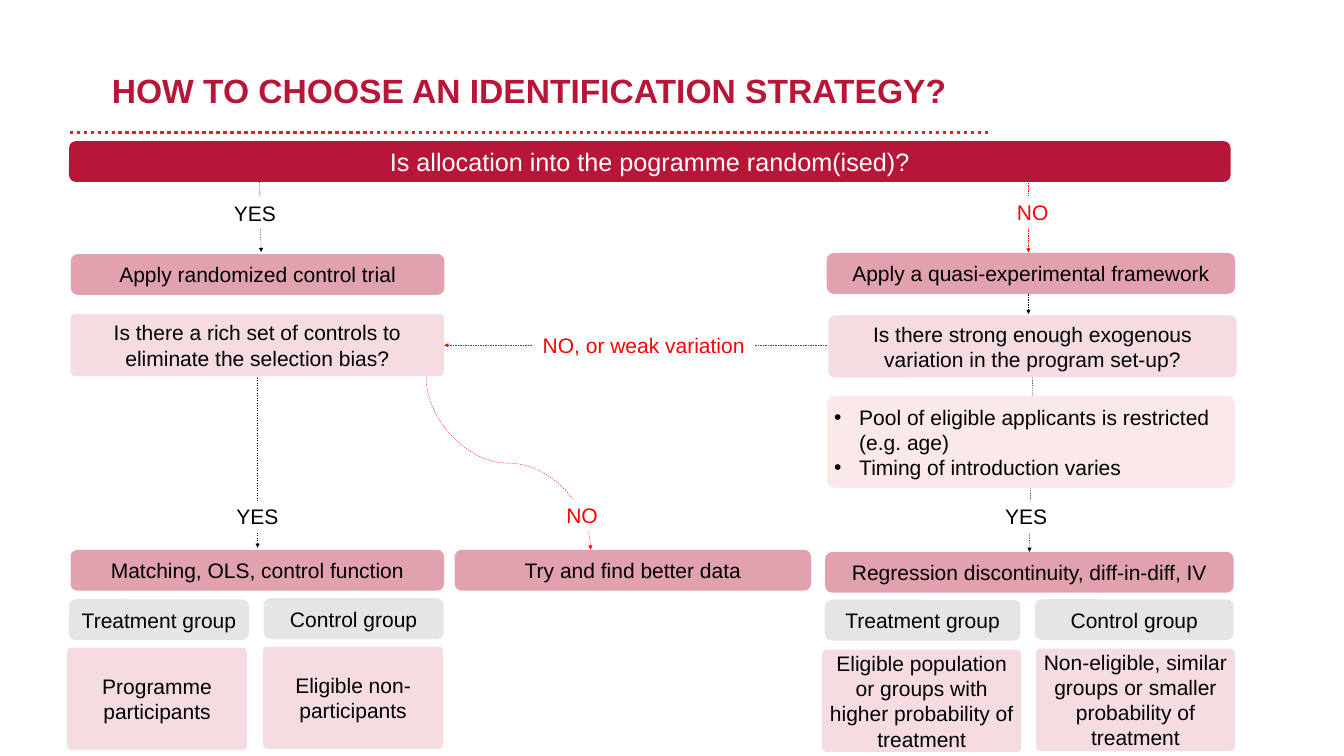
from dataclasses import dataclass

from lxml import etree
from pptx import Presentation
from pptx.dml.color import RGBColor
from pptx.enum.dml import MSO_LINE
from pptx.enum.shapes import MSO_CONNECTOR, MSO_SHAPE
from pptx.enum.text import MSO_ANCHOR, PP_ALIGN
from pptx.oxml.ns import qn
from pptx.util import Pt

ROUND = MSO_SHAPE.ROUNDED_RECTANGLE
STRAIGHT, CURVE = MSO_CONNECTOR.STRAIGHT, MSO_CONNECTOR.CURVE
DASH, DOTS = MSO_LINE.DASH, MSO_LINE.ROUND_DOT
CENTER, LEFT = PP_ALIGN.CENTER, PP_ALIGN.LEFT
MIDDLE = MSO_ANCHOR.MIDDLE


@dataclass(frozen=True)
class Theme:
    font: str = "Arial"
    brand: str = "B81639"
    rule: str = "D8222C"
    grey: str = "C0C0C0"
    blush: str = "FBE9EA"
    white: str = "FFFFFF"
    black: str = "000000"
    red: str = "FF0000"
    title: int = 48
    lead: int = 36
    body: int = 30


theme = Theme()


def box(place, text, fill, alpha=100, ink=theme.black, size=theme.body,
        adj=0.167, align=CENTER):
    """Add a rounded box; alpha is the opacity of its fill in percent."""
    shape = slide.shapes.add_shape(ROUND, *map(Pt, place))
    shape.adjustments[0] = adj
    shape.shadow.inherit = False
    shape.line.fill.background()
    shape.fill.solid()
    shape.fill.fore_color.rgb = RGBColor.from_string(fill)
    if alpha < 100:
        color = next(shape.element.spPr.iter(qn("a:srgbClr")))
        etree.SubElement(color, qn("a:alpha")).set("val", str(alpha * 1000))
    frame = shape.text_frame
    frame.word_wrap = True
    frame.vertical_anchor = MIDDLE
    frame.text = text
    for para in frame.paragraphs:
        para.alignment = align
        for run in para.runs:
            run.font.name = theme.font
            run.font.size = Pt(size)
            run.font.color.rgb = RGBColor.from_string(ink)
    return shape


def link(ends, color, width=0.5, dash=DASH, kind=STRAIGHT, arrow=True):
    line = slide.shapes.add_connector(kind, *map(Pt, ends))
    line.line.color.rgb = RGBColor.from_string(color)
    line.line.width = Pt(width)
    line.line.dash_style = dash
    props = line.element.spPr
    if arrow:
        tip = etree.SubElement(props.find(qn("a:ln")), qn("a:tailEnd"))
        tip.set("type", "triangle")
    etree.SubElement(props, qn("a:effectLst"))
    return line


deck = Presentation()
deck.slide_width, deck.slide_height = Pt(1919.5), Pt(1080)
slide = deck.slides.add_slide(deck.slide_layouts[5])

# Title and rule
title = slide.shapes.title
title.left, title.top, title.width, title.height = map(
    Pt, (99.4, 100, 1313.3, 58.3))
frame = title.text_frame
frame.margin_left = frame.margin_right = 0
frame.margin_top = frame.margin_bottom = 0
frame.vertical_anchor = MIDDLE
frame.word_wrap = True
frame.text = "HOW TO CHOOSE AN IDENTIFICATION STRATEGY?"
para = frame.paragraphs[0]
para.alignment = CENTER
font = para.runs[0].font
font.name, font.size, font.bold = theme.font, Pt(theme.title), True
font.color.rgb = RGBColor.from_string(theme.brand)
link((99.4, 189.4, 1412.6, 189.4), theme.rule, 5, DOTS, arrow=False)

# Arrows, behind the boxes and labels
for ends, color in (
    ((370.8, 259.2, 373, 360), theme.black),
    ((1468.8, 261.4, 1468.8, 360.7), theme.red),
    ((1468.8, 420.5, 1468.8, 448.6), theme.black),
    ((1474.6, 539.3, 1470.2, 788.4), theme.black),
    ((1180.8, 493.2, 634.3, 493.2), theme.red),
    ((367.9, 539.3, 367.9, 782.6), theme.black),
):
    link(ends, color)

# A quarter turn and a flip make the curve leave and arrive vertically
curve = link((602.6, 544.3, 849.6, 779), theme.red, kind=CURVE)
turn = curve.element.spPr.find(qn("a:xfrm"))
turn.set("rot", str(270 * 60000))
turn.set("flipH", "1")

# Opening question
BAR = 58.3
box((98.6, 201.6, 1658.9, BAR),
    "Is allocation into the pogramme random(ised)?",
    theme.brand, ink=theme.white, size=theme.lead)

# Methods
for text, left, top, width in (
    ("Apply randomized control trial", 101.2, 362.9, 533.5),
    ("Apply a quasi-experimental framework", 1180.8, 361.4, 583.2),
    ("Matching, OLS, control function", 100.8, 785.5, 533.5),
    ("Try and find better data", 649.4, 785.5, 509),
    ("Regression discontinuity, diff-in-diff, IV", 1178.6, 788.4, 583.2),
):
    box((left, top, width, BAR), text, theme.brand, 40)

# Follow-up questions
for text, left, top, width, adj in (
    ("Is there a rich set of controls to eliminate the selection bias?",
     100.8, 448.6, 533.5, 0.073),
    ("Is there strong enough exogenous variation in the program set-up?",
     1183, 450.7, 583.2, 0.104),
):
    box((left, top, width, 88.6), text, theme.brand, 15, adj=adj)

# Sources of variation
pool = box((1180.8, 565.9, 583.2, 131),
           "Pool of eligible applicants is restricted (e.g. age)\n"
           "Timing of introduction varies",
           theme.blush, adj=0.086, align=LEFT)
for para in pool.text_frame.paragraphs:
    props = para._p.get_or_add_pPr()
    props.set("marL", str(Pt(36)))
    props.set("indent", str(Pt(-36)))
    etree.SubElement(props, qn("a:buFont")).set("typeface", theme.font)
    etree.SubElement(props, qn("a:buChar")).set("char", "•")

# Answers on the arrows
for text, left, top, ink in (
    ("YES", 270.7, 281.5, theme.black),
    ("NO", 1381.7, 280.1, theme.red),
    ("YES", 274.3, 715, theme.black),
    ("NO", 738, 713.5, theme.red),
    ("YES", 1372.3, 715, theme.black),
):
    box((left, top, 186.5, 46), text, theme.white, ink=ink)
box((761, 466.6, 316.8, 54), "NO, or weak variation", theme.white,
    ink=theme.red)

# Groups to compare
for text, left, top, width in (
    ("Treatment group", 98.6, 856.1, 257),
    ("Control group", 376.6, 854.6, 257),
    ("Treatment group", 1177.9, 856.8, 279.4),
    ("Control group", 1478.2, 856.1, 283.7),
):
    box((left, top, width, BAR), text, theme.grey, 40)

for text, left, top, width in (
    ("Programme participants", 95.8, 925.2, 257),
    ("Eligible non-participants", 375.8, 923.8, 257),
    ("Eligible population or groups with higher probability of treatment",
     1174.3, 928.1, 284),
    ("Non-eligible, similar groups or smaller probability of treatment",
     1479.6, 926.6, 284),
):
    box((left, top, width, 146.2), text, theme.brand, 15, adj=0.043)

deck.save("out.pptx")
